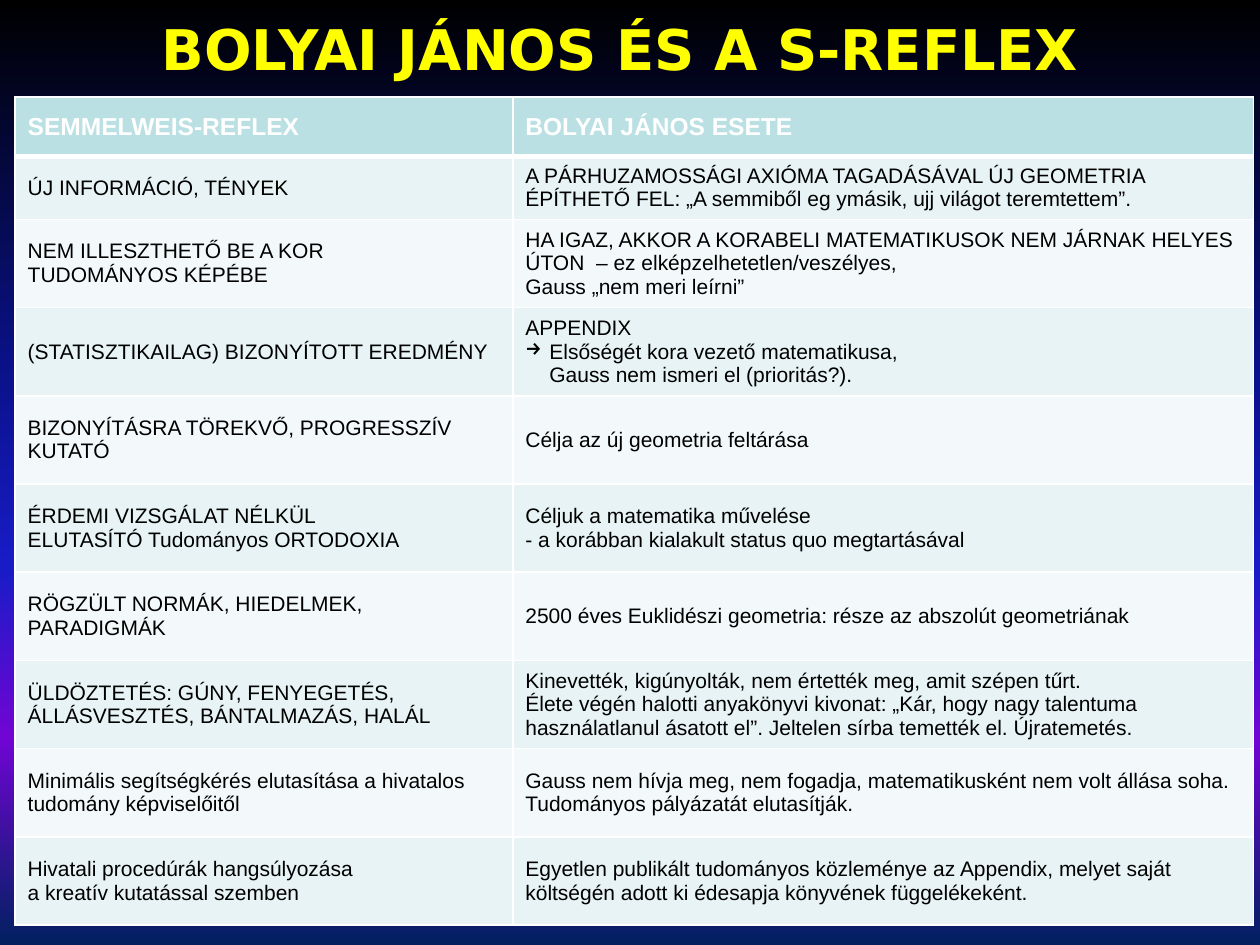
from dataclasses import dataclass
from lxml import etree
from pptx import Presentation
from pptx.dml.color import RGBColor
from pptx.enum.text import MSO_ANCHOR, PP_ALIGN
from pptx.oxml.ns import qn
from pptx.util import Inches, Pt

MID = MSO_ANCHOR.MIDDLE
CENTER = PP_ALIGN.CENTER


@dataclass(frozen=True)
class Theme:
    font: str = "Arial"
    title_font: str = "DejaVu Sans"
    title_size: int = 32
    head_size: int = 14
    body_size: int = 12
    title: str = "FFFF00"
    head: str = "BBE0E3"
    bands: tuple = ("E7F3F4", "F3F9FA")
    ink: str = "000000"
    white: str = "FFFFFF"
    sky: tuple = ((0, "000000"), (40, "0A128C"), (60, "181CC7"),
                  (78, "7005D4"), (100, "002060"))


T = Theme()
ARROW = "→"
HEADS = ("SEMMELWEIS-REFLEX", "BOLYAI JÁNOS ESETE")
# Each line of a cell is one paragraph
ROWS = [
    ("ÚJ INFORMÁCIÓ, TÉNYEK",
     "A PÁRHUZAMOSSÁGI AXIÓMA TAGADÁSÁVAL ÚJ GEOMETRIA ÉPÍTHETŐ FEL: "
     "„A semmiből eg ymásik, ujj világot teremtettem”."),
    ("NEM ILLESZTHETŐ BE A KOR\nTUDOMÁNYOS KÉPÉBE",
     "HA IGAZ, AKKOR A KORABELI MATEMATIKUSOK NEM JÁRNAK HELYES ÚTON  "
     "– ez elképzelhetetlen/veszélyes,\nGauss „nem meri leírni”"),
    ("(STATISZTIKAILAG) BIZONYÍTOTT EREDMÉNY",
     "APPENDIX\n→Elsőségét kora vezető matematikusa,\n"
     "\tGauss nem ismeri el (prioritás?)."),
    ("BIZONYÍTÁSRA TÖREKVŐ, PROGRESSZÍV KUTATÓ",
     "Célja az új geometria feltárása"),
    ("ÉRDEMI VIZSGÁLAT NÉLKÜL\nELUTASÍTÓ Tudományos ORTODOXIA",
     "Céljuk a matematika művelése\n"
     "- a korábban kialakult status quo megtartásával"),
    ("RÖGZÜLT NORMÁK, HIEDELMEK, PARADIGMÁK",
     "2500 éves Euklidészi geometria: része az abszolút geometriának"),
    ("ÜLDÖZTETÉS: GÚNY, FENYEGETÉS, ÁLLÁSVESZTÉS, BÁNTALMAZÁS, HALÁL",
     "Kinevették, kigúnyolták, nem értették meg, amit szépen tűrt.\n"
     "Élete végén halotti anyakönyvi kivonat: „Kár, hogy nagy talentuma "
     "használatlanul ásatott el”. Jeltelen sírba temették el. Újratemetés."),
    ("Minimális segítségkérés elutasítása a hivatalos tudomány képviselőitől",
     "Gauss nem hívja meg, nem fogadja, matematikusként nem volt állása soha. "
     "Tudományos pályázatát elutasítják."),
    ("Hivatali procedúrák hangsúlyozása\na kreatív kutatással szemben",
     "Egyetlen publikált tudományos közleménye az Appendix, melyet saját "
     "költségén adott ki édesapja könyvének függelékeként."),
]


def write(para, text, font, size, color, bold):
    run = para.add_run()
    run.text = text
    run.font.name, run.font.size, run.font.bold = font, Pt(size), bold
    run.font.color.rgb = RGBColor.from_string(color)


def edge(cell, side, width):
    line = etree.SubElement(cell._tc.get_or_add_tcPr(), qn(f"a:ln{side}"),
                            w=str(Pt(width)))
    fill = etree.SubElement(line, qn("a:solidFill"))
    etree.SubElement(fill, qn("a:srgbClr"), val=T.white)


deck = Presentation()
deck.slide_width, deck.slide_height = Inches(10), Inches(7.5)
slide = deck.slides.add_slide(deck.slide_layouts[6])

# Night sky background
back = slide.background.fill
back.gradient()
back.gradient_angle = 270
stops = slide._element.find(".//" + qn("a:gsLst"))
for old in list(stops):
    stops.remove(old)
for pos, color in T.sky:
    stop = etree.SubElement(stops, qn("a:gs"), pos=str(pos * 1000))
    etree.SubElement(stop, qn("a:srgbClr"), val=color)

# Title
frame = slide.shapes.add_textbox(0, 0, deck.slide_width, Inches(0.76)).text_frame
frame.word_wrap = True
frame.vertical_anchor = MID
frame.paragraphs[0].alignment = CENTER
write(frame.paragraphs[0], "BOLYAI JÁNOS ÉS A S-REFLEX ",
      T.title_font, T.title_size, T.title, True)

# Table grid: two low rows, then equal tall ones
wide = [3.95, 5.88]
high = [0.47] * 2 + [0.7] * (len(ROWS) - 1)
grid = slide.shapes.add_table(len(high), len(wide), Inches(0.12), Inches(0.77),
                              Inches(sum(wide)), Inches(sum(high))).table
for col, size in zip(grid.columns, wide):
    col.width = Inches(size)
for row, size in zip(grid.rows, high):
    row.height = Inches(size)

# Cells
for r, texts in enumerate([HEADS] + ROWS):
    top = r == 0
    for c, text in enumerate(texts):
        cell = grid.cell(r, c)
        cell.vertical_anchor = MID
        for side in "LRTB":
            thick = (r, side) in ((0, "B"), (1, "T"))
            edge(cell, side, 3 if thick else 1)
        cell.fill.solid()
        shade = T.head if top else T.bands[(r - 1) % 2]
        cell.fill.fore_color.rgb = RGBColor.from_string(shade)
        for i, line in enumerate(text.split("\n")):
            body = cell.text_frame
            para = body.add_paragraph() if i else body.paragraphs[0]
            # Arrow bullet, and the indented line that follows it
            if line[0] in (ARROW, "\t"):
                props = para._p.get_or_add_pPr()
                props.set("marL", str(Inches(0.19)))
                if line[0] == ARROW:
                    props.set("indent", str(Inches(-0.19)))
                    etree.SubElement(props, qn("a:buChar"), char=ARROW)
                line = line[1:]
            write(para, line, T.font, T.head_size if top else T.body_size,
                  T.white if top else T.ink, top)

deck.save("out.pptx")
